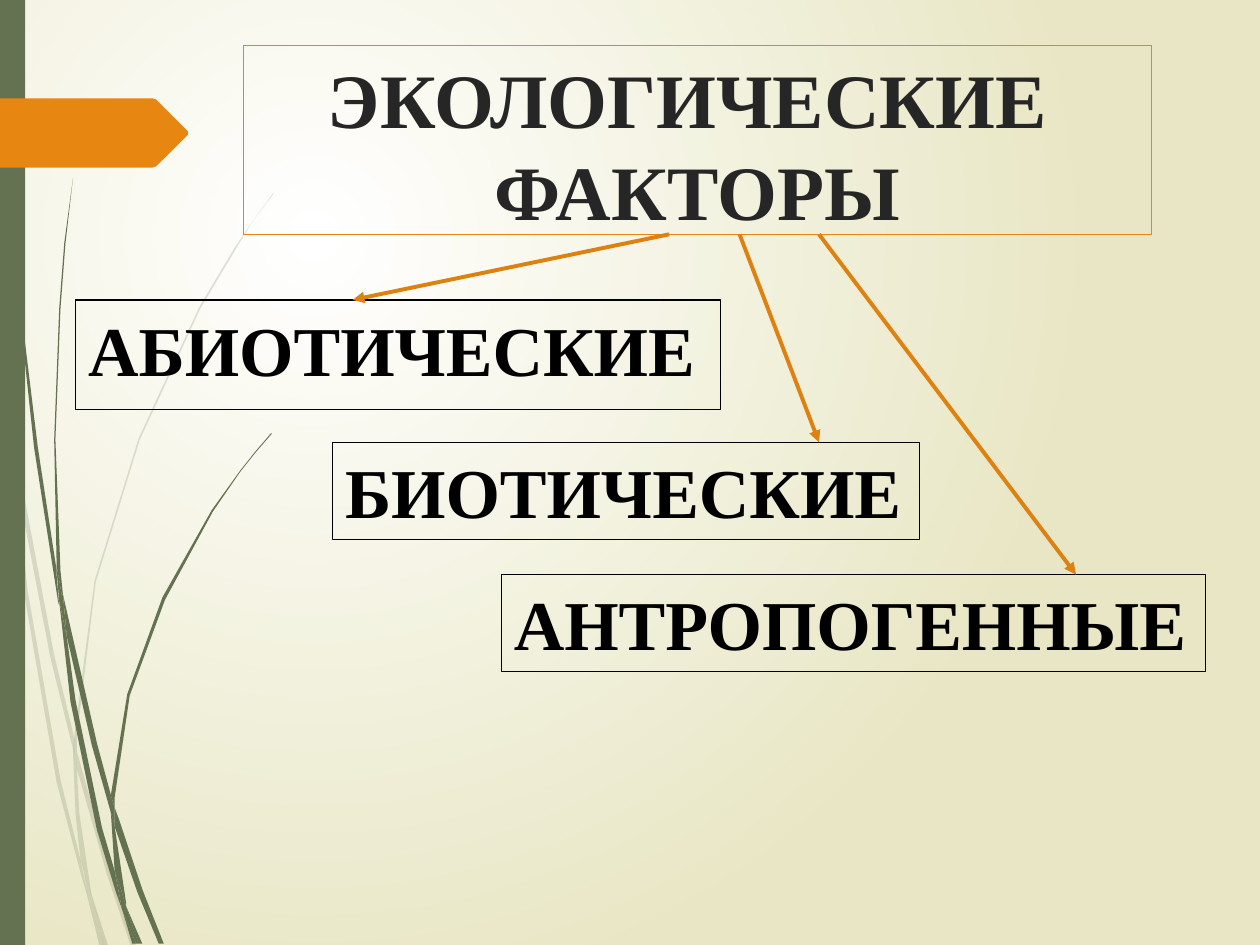
from lxml import etree
from pptx import Presentation
from pptx.dml.color import RGBColor
from pptx.enum.shapes import MSO_CONNECTOR, MSO_SHAPE
from pptx.enum.text import MSO_ANCHOR, MSO_AUTO_SIZE, PP_ALIGN
from pptx.oxml import parse_xml
from pptx.oxml.ns import nsdecls, qn
from pptx.util import Inches, Pt

WHITE = RGBColor(0xFF, 0xFF, 0xFF)
CREAM = RGBColor(0xE8, 0xE6, 0xC4)
GREEN = RGBColor(0x64, 0x72, 0x52)
ORANGE = RGBColor(0xE7, 0x87, 0x12)
ARROW = RGBColor(0xDD, 0x81, 0x11)
DARK = RGBColor(0x26, 0x26, 0x26)
BLACK = RGBColor(0, 0, 0)
FONT = "Times New Roman"

# Content: text and box (left, top, width, height)
TITLE = ("ЭКОЛОГИЧЕСКИЕ  ФАКТОРЫ", (1.93, 0.36, 7.21, 1.5))
ABIOTIC = ("АБИОТИЧЕСКИЕ", (0.6, 2.38, 5.12, 0.87))
OTHER_FACTORS = [
    ("БИОТИЧЕСКИЕ", (2.64, 3.51, 4.66, 0.77)),
    ("АНТРОПОГЕННЫЕ", (3.98, 4.56, 5.59, 0.77)),
]
ARROWS = [
    ((5.31, 1.86), (2.8, 2.38)),
    ((5.87, 1.86), (6.5, 3.51)),
    ((6.5, 1.86), (8.54, 4.56)),
]

# Grass blades: outline corners (x, y)
PALE_BLADES = [
    [(0.08, 3.5), (0.06, 3.22), (0, 2.82), (0, 2.99), (0.07, 3.44)],
    [(0.4, 5.22), (0.59, 5.99), (0.59, 5.86), (0.43, 5.2), (0.1, 3.45), (0.12, 3.76)],
    [(0.64, 6.07), (0.61, 5.96), (0.61, 6.1), (0.85, 6.94), (1.04, 7.51),
     (1.08, 7.51), (0.88, 6.92)],
    [(0.83, 7.51), (0.86, 7.51), (0.73, 7.11)],
    [(0.64, 6.83), (0.48, 6.19), (0.22, 4.69), (0.12, 3.76), (0.08, 3.5),
     (0.19, 4.7), (0.45, 6.21), (0.64, 6.93), (0.7, 7.14), (0.69, 7.07)],
    [(0.58, 5.99), (0.6, 6.46), (0.64, 6.83), (0.67, 6.92), (0.73, 7.11),
     (0.72, 7.06), (0.63, 6.46), (0.61, 6.1), (0.61, 6.08)],
    [(0.61, 5.84), (0.76, 4.62), (1.11, 3.49), (1.59, 2.45), (1.87, 1.98),
     (2.01, 1.75), (2.17, 1.54), (2.17, 1.53), (2.01, 1.75), (1.86, 1.97),
     (1.58, 2.44), (1.1, 3.48), (0.75, 4.61), (0.59, 5.84), (0.59, 5.86), (0.61, 5.96)],
    [(0.7, 7.14), (0.79, 7.51), (0.82, 7.51)],
    [(0.61, 6.08), (0.61, 6.1), (0.61, 5.96), (0.59, 5.86), (0.58, 5.99)],
    [(0.67, 6.92), (0.65, 6.83), (0.69, 7.07), (0.7, 7.14), (0.82, 7.51),
     (0.83, 7.51), (0.73, 7.11)],
]
GREEN_BLADES = [
    [(0.05, 1.1), (0.14, 2.33), (0.27, 3.55), (0.46, 4.77), (0.47, 4.81),
     (0.45, 4.57), (0.45, 4.53), (0.3, 3.55), (0.15, 2.32), (0.06, 1.09),
     (0.04, 0.48), (0.03, 0), (0.02, 0), (0.03, 0.48)],
    [(0.73, 5.92), (0.88, 6.45), (0.88, 6.33), (0.88, 6.31), (0.77, 5.9),
     (0.5, 4.72), (0.53, 5.05)],
    [(0.94, 6.49), (0.91, 6.41), (0.91, 6.56), (1.09, 7.08), (1.26, 7.49),
     (1.3, 7.49), (1.13, 7.06)],
    [(0.91, 6.91), (0.81, 6.57), (0.6, 5.56), (0.53, 5.05), (0.47, 4.77),
     (0.56, 5.57), (0.77, 6.59), (0.92, 7.08), (0.97, 7.22), (0.96, 7.17)],
    [(0.5, 4.72), (0.48, 4.53), (0.44, 3.49), (0.48, 2.45), (0.52, 1.93),
     (0.58, 1.41), (0.51, 1.93), (0.47, 2.45), (0.43, 3.49), (0.45, 4.49), (0.49, 4.72)],
    [(1.1, 7.49), (1.13, 7.49), (1, 7.19)],
    [(0.47, 4.77), (0.53, 5.05), (0.5, 4.72), (0.49, 4.72), (0.45, 4.49), (0.45, 4.53)],
    [(0.91, 6.33), (1.03, 5.52), (1.31, 4.76), (1.69, 4.06), (1.91, 3.74),
     (2.03, 3.59), (2.16, 3.44), (2.15, 3.44), (2.03, 3.58), (1.91, 3.73),
     (1.68, 4.05), (1.29, 4.74), (1.01, 5.51), (0.88, 6.31), (0.91, 6.41)],
    [(0.97, 7.22), (1.05, 7.49), (1.08, 7.49)],
    [(0.88, 6.45), (0.91, 6.91), (0.96, 7.06), (1, 7.19), (1, 7.16),
     (0.91, 6.56), (0.9, 6.51)],
    [(0.88, 6.45), (0.9, 6.51), (0.91, 6.56), (0.91, 6.41), (0.88, 6.31), (0.88, 6.33)],
    [(0.96, 7.06), (0.91, 6.91), (0.96, 7.17), (0.97, 7.22), (1.08, 7.49),
     (1.1, 7.49), (1, 7.19)],
]
PAGE_TAG = [(0, 0.78), (1.21, 0.78), (1.24, 0.79), (1.49, 1.04), (1.49, 1.07),
            (1.24, 1.32), (1.21, 1.33), (0, 1.33)]


def paint(shape, color):
    shape.shadow.inherit = False
    shape.fill.solid()
    shape.fill.fore_color.rgb = color
    shape.line.fill.background()


def add_outline(shapes, points, color, alpha=None):
    corners = [(Inches(x), Inches(y)) for x, y in points]
    builder = shapes.build_freeform(*corners[0], scale=1.0)
    builder.add_line_segments(corners[1:], close=True)
    outline = builder.convert_to_shape()
    paint(outline, color)
    if alpha:
        clr = outline.element.spPr.find(qn("a:solidFill")).find(qn("a:srgbClr"))
        etree.SubElement(clr, qn("a:alpha"), val=str(alpha * 1000))


def fill_box(sp, content, size, color, outline, wrap=True):
    text, box = content
    sp.left, sp.top, sp.width, sp.height = map(Inches, box)
    sp.line.color.rgb = outline
    sp.line.width = Pt(0.75)
    tf = sp.text_frame
    tf.text = text
    tf.word_wrap = wrap
    tf.auto_size = MSO_AUTO_SIZE.NONE if wrap else MSO_AUTO_SIZE.SHAPE_TO_FIT_TEXT
    tf.vertical_anchor = MSO_ANCHOR.TOP
    p = tf.paragraphs[0]
    font = p.runs[0].font
    font.name, font.size, font.bold = FONT, Pt(size), True
    font.color.rgb = color
    return p


prs = Presentation()
prs.slide_width, prs.slide_height = Inches(10), Inches(7.5)
s = prs.slides.add_slide(prs.slide_layouts[1])
shapes = s.shapes
title, body = shapes.title, s.placeholders[1]

# Background: radial gradient
fill = s.background.fill
fill.gradient()
for stop, color in zip(fill.gradient_stops, (WHITE, CREAM)):
    stop.color.rgb = color
lin = next(s.element.iter(qn("a:lin")))
lin.getparent().replace(lin, parse_xml(
    f'<a:path {nsdecls("a")} path="circle">'
    '<a:fillToRect l="50000" t="50000" r="100000" b="100000"/></a:path>'))

# Grass, side bar and page tag
for points in PALE_BLADES:
    add_outline(shapes, points, GREEN, alpha=20)
for points in GREEN_BLADES:
    add_outline(shapes, points, GREEN)
bar = shapes.add_shape(MSO_SHAPE.RECTANGLE, 0, 0, Inches(0.2), prs.slide_height)
paint(bar, GREEN)
add_outline(shapes, PAGE_TAG, ORANGE)

# Title and first factor, placed in front of the decoration
for sp in (title, body):
    shapes.element.append(sp.element)
p = fill_box(title, TITLE, 44, DARK, ORANGE)
p.alignment = PP_ALIGN.CENTER

p = fill_box(body, ABIOTIC, 40, BLACK, BLACK)
p.space_before = Pt(10)
pPr = p._p.get_or_add_pPr()
pPr.set("marL", "0")
pPr.set("indent", "0")
etree.SubElement(pPr, qn("a:buNone"))

# Remaining factors
for content in OTHER_FACTORS:
    box = shapes.add_textbox(*map(Inches, content[1]))
    fill_box(box, content, 40, BLACK, BLACK, wrap=False)

# Arrows from the title to the factors
for start, end in ARROWS:
    arrow = shapes.add_connector(MSO_CONNECTOR.STRAIGHT, *map(Inches, start + end))
    arrow.line.color.rgb = ARROW
    arrow.line.width = Pt(2.25)
    etree.SubElement(arrow.line._get_or_add_ln(), qn("a:tailEnd"), type="triangle")
    etree.SubElement(arrow.element.spPr, qn("a:effectLst"))

prs.save("out.pptx")
